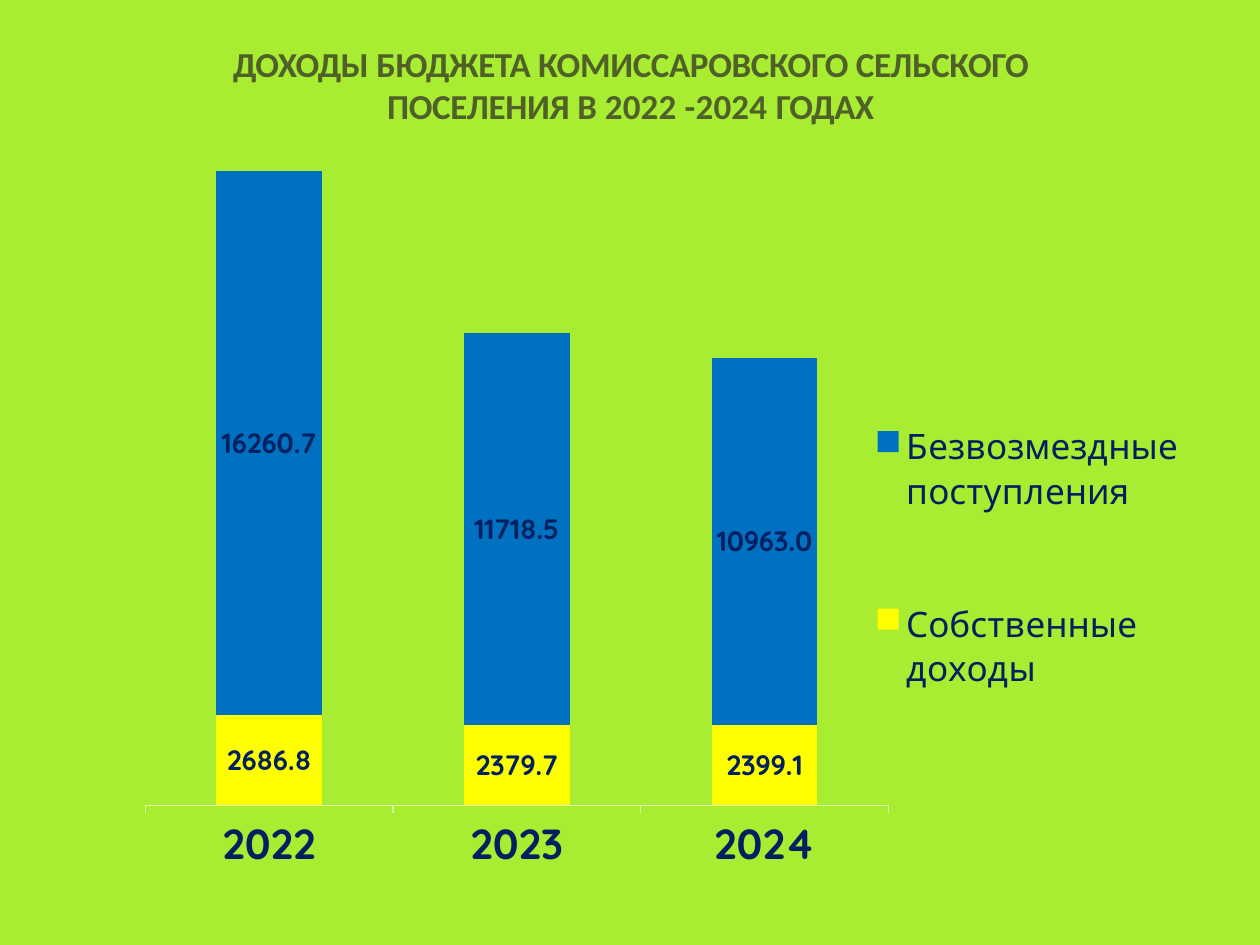
from lxml import etree
from pptx import Presentation
from pptx.chart.data import CategoryChartData
from pptx.dml.color import RGBColor
from pptx.enum.chart import XL_CHART_TYPE, XL_LEGEND_POSITION, XL_TICK_LABEL_POSITION, XL_TICK_MARK
from pptx.enum.shapes import MSO_SHAPE
from pptx.enum.text import MSO_ANCHOR, PP_ALIGN
from pptx.oxml import parse_xml
from pptx.oxml.ns import nsdecls, qn
from pptx.util import Inches, Pt

STACKED = XL_CHART_TYPE.COLUMN_STACKED
LEGEND_RIGHT = XL_LEGEND_POSITION.RIGHT
TICK_OUT, TICK_NONE = XL_TICK_MARK.OUTSIDE, XL_TICK_MARK.NONE
LABELS_LOW = XL_TICK_LABEL_POSITION.LOW
RECTANGLE = MSO_SHAPE.RECTANGLE
TOP, CENTER = MSO_ANCHOR.TOP, PP_ALIGN.CENTER

LIME = RGBColor(0xA8, 0xED, 0x31)
OLIVE = RGBColor(0x4F, 0x61, 0x28)
NAVY = RGBColor(0x00, 0x20, 0x60)
BLUE = RGBColor(0x00, 0x70, 0xC0)
YELLOW = RGBColor(0xFF, 0xFF, 0x00)
PALE = RGBColor(0xDD, 0xF8, 0xAD)
WHITE = RGBColor(0xFF, 0xFF, 0xFF)

WIDTH, HEIGHT = Inches(10), Inches(7.5)
TITLE_BOX = (0.137, 0.044, 0.727, 0.092)
CHART_BOX = (0.075, 0.143, 0.874, 0.788)
PLOT_BOX = (0.046, 0.046, 0.675, 0.854)
LEGEND_BOX = (0.705, 0.27, 0.285, 0.595)

TITLE_RUNS = [
    ("ДОХОДЫ ", -30),
    ("БЮДЖЕТА КОМИССАРОВСКОГО СЕЛЬСКОГО ПОСЕЛЕНИЯ ", -20),
    ("В ", 0),
    ("2022 -2024 ", 10),
    ("ГОДАХ", -40),
]
YEARS = ["2022", "2023", "2024"]
INCOMES = [
    ("Собственные доходы", (2686.8, 2379.7, 2399.1), YELLOW),
    ("Безвозмездные поступления", (16260.7, 11718.5, 10963.0), BLUE),
]


def on_slide(box):
    """Turn shares of the slide into left, top, width and height."""
    return [round(share * size) for share, size in zip(box, (WIDTH, HEIGHT) * 2)]


def style_font(font, size, color, bold, face):
    """Set the size, colour, weight and face of a font."""
    font.size, font.bold, font.name = Pt(size), bold, face
    font.color.rgb = color


def add_backdrop(slide, box):
    """Cover the box with lime, behind everything else."""
    backdrop = slide.shapes.add_shape(RECTANGLE, *on_slide(box))
    backdrop.shadow.inherit = False
    backdrop.fill.solid()
    backdrop.fill.fore_color.rgb = LIME
    backdrop.line.fill.background()
    slide.shapes._spTree.insert(2, backdrop._element)


def place_title(slide, box):
    """Fill the title placeholder with its tracked runs."""
    title = slide.shapes.title
    title.left, title.top, title.width, title.height = on_slide(box)
    frame = title.text_frame
    frame.word_wrap = True
    frame.vertical_anchor = TOP
    frame.margin_left = frame.margin_right = frame.margin_bottom = 0
    frame.margin_top = Inches(0.01)
    heading = frame.paragraphs[0]
    heading.alignment = CENTER
    for words, tracking in TITLE_RUNS:
        run = heading.add_run()
        run.text = words
        style_font(run.font, 20, OLIVE, True, "Calibri")
        run.font._element.set("spc", str(tracking))


def set_layout(part, box, after, inner=False):
    """Fix a chart part at shares of the chart's own box."""
    for old in part.findall(qn("c:layout")):
        part.remove(old)
    layout = parse_xml(f"<c:layout {nsdecls('c')}><c:manualLayout/></c:layout>")
    settings = [("layoutTarget", "inner")] if inner else []
    settings += [("xMode", "edge"), ("yMode", "edge")]
    settings += zip("xywh", box)
    for tag, value in settings:
        etree.SubElement(layout[0], qn(f"c:{tag}")).set("val", str(value))
    if after is None:
        part.insert(0, layout)
    else:
        after.addnext(layout)


def add_income_chart(slide, box):
    """Stack own income and transfers for each year."""
    incomes = CategoryChartData(number_format="0.0")
    incomes.categories = YEARS
    for name, values, _ in INCOMES:
        incomes.add_series(name, values)
    chart = slide.shapes.add_chart(STACKED, *on_slide(box), incomes).chart
    chart.has_title = False
    style_font(chart.font, 9.7, WHITE, False, "Quicksand")

    plot = chart.plots[0]
    plot.gap_width, plot.overlap, plot.vary_by_categories = 134, 100, False
    for series, (_, _, color) in zip(plot.series, INCOMES):
        series.format.fill.solid()
        series.format.fill.fore_color.rgb = color
        labels = series.data_labels
        labels.show_value = True
        labels.number_format, labels.number_format_is_linked = "0.0", False
        style_font(labels.font, 16, NAVY, True, "Quicksand")

    years = chart.category_axis
    years.major_tick_mark, years.minor_tick_mark = TICK_OUT, TICK_NONE
    years.tick_label_position = LABELS_LOW
    years.format.line.color.rgb = PALE
    years.format.line.width = Pt(0.75)
    style_font(years.tick_labels.font, 24, NAVY, True, "Quicksand")

    amounts = chart.value_axis
    amounts.visible = False
    amounts.has_major_gridlines = False
    amounts.minimum_scale, amounts.maximum_scale = 0, 19000

    chart.has_legend = True
    legend = chart.legend
    legend.position, legend.include_in_layout = LEGEND_RIGHT, False
    style_font(legend.font, 20, NAVY, False, "Quicksand")
    set_layout(legend._element, LEGEND_BOX, legend._element.find(qn("c:legendPos")))
    set_layout(chart._chartSpace.chart.plotArea, PLOT_BOX, None, inner=True)


def main():
    """Build and save the budget income slide."""
    deck = Presentation()
    deck.slide_width, deck.slide_height = WIDTH, HEIGHT
    slide = deck.slides.add_slide(deck.slide_layouts[5])
    add_backdrop(slide, (0, 0, 1, 1))
    place_title(slide, TITLE_BOX)
    add_income_chart(slide, CHART_BOX)
    deck.save("out.pptx")


if __name__ == "__main__":
    main()
